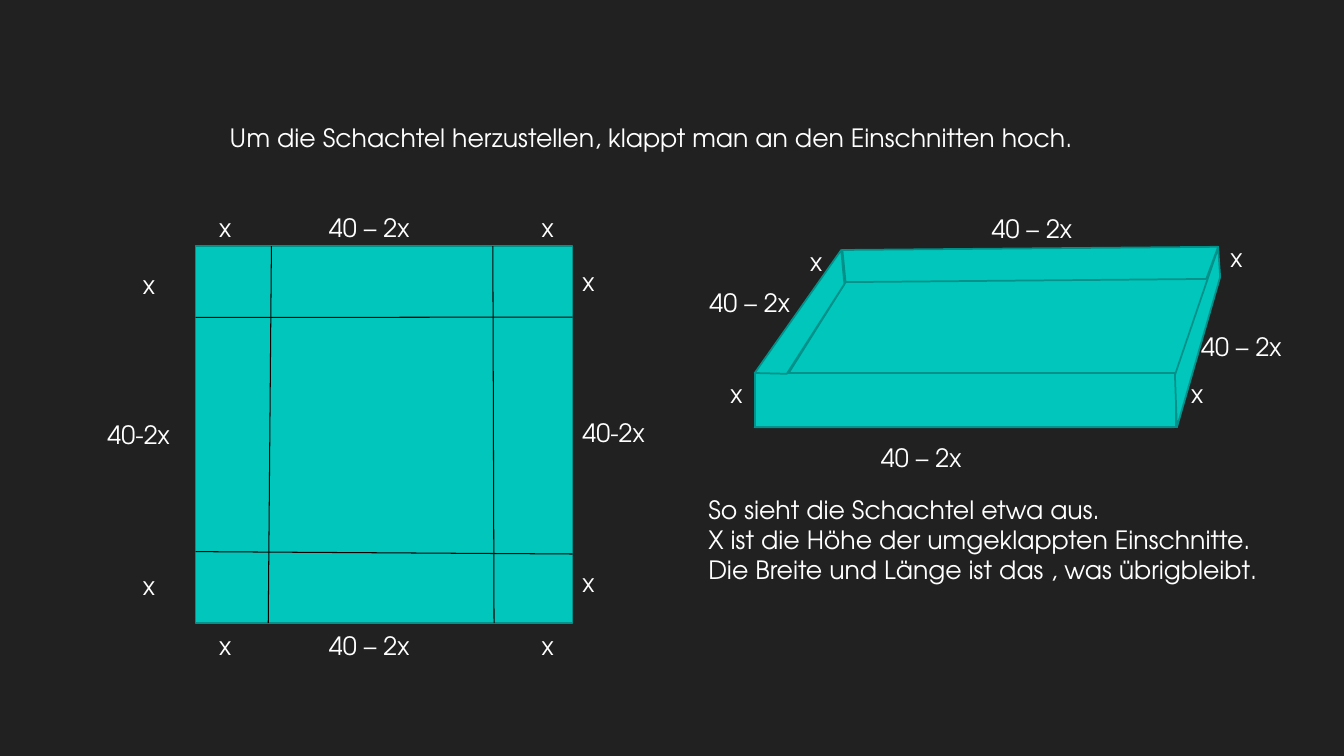
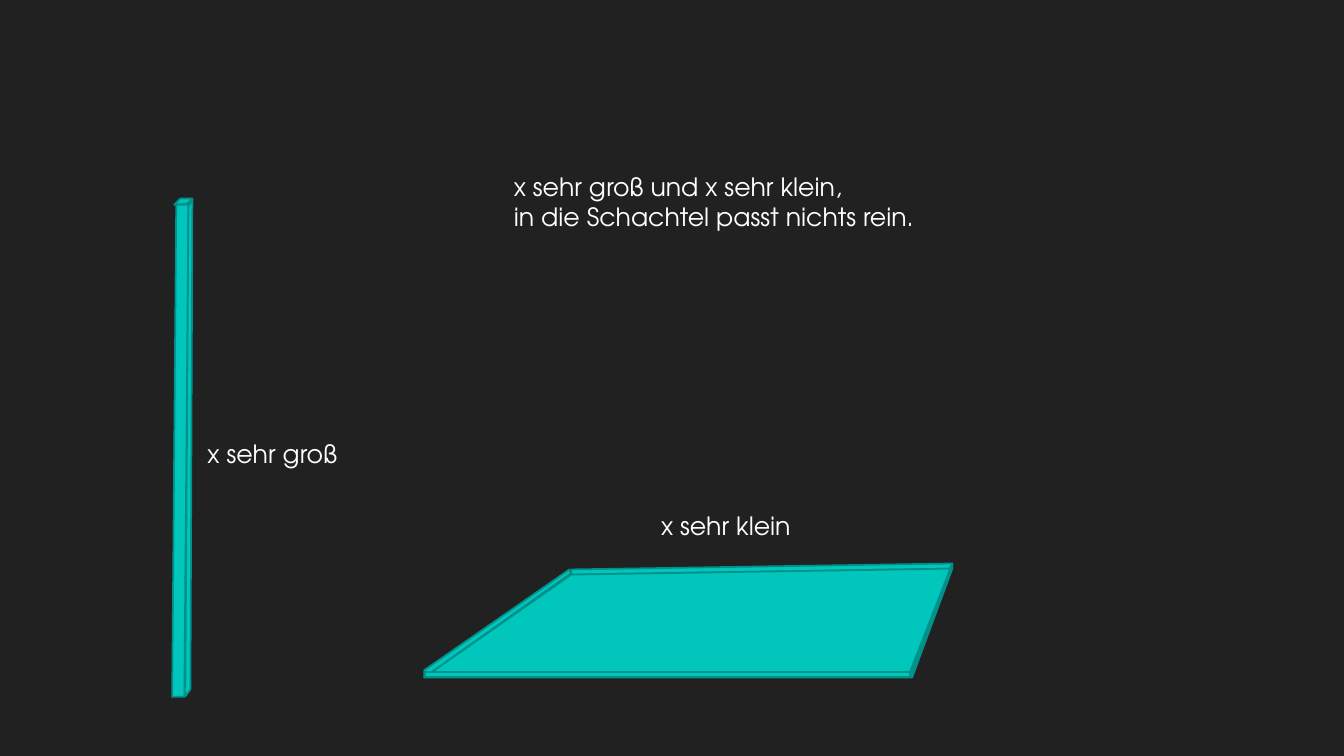
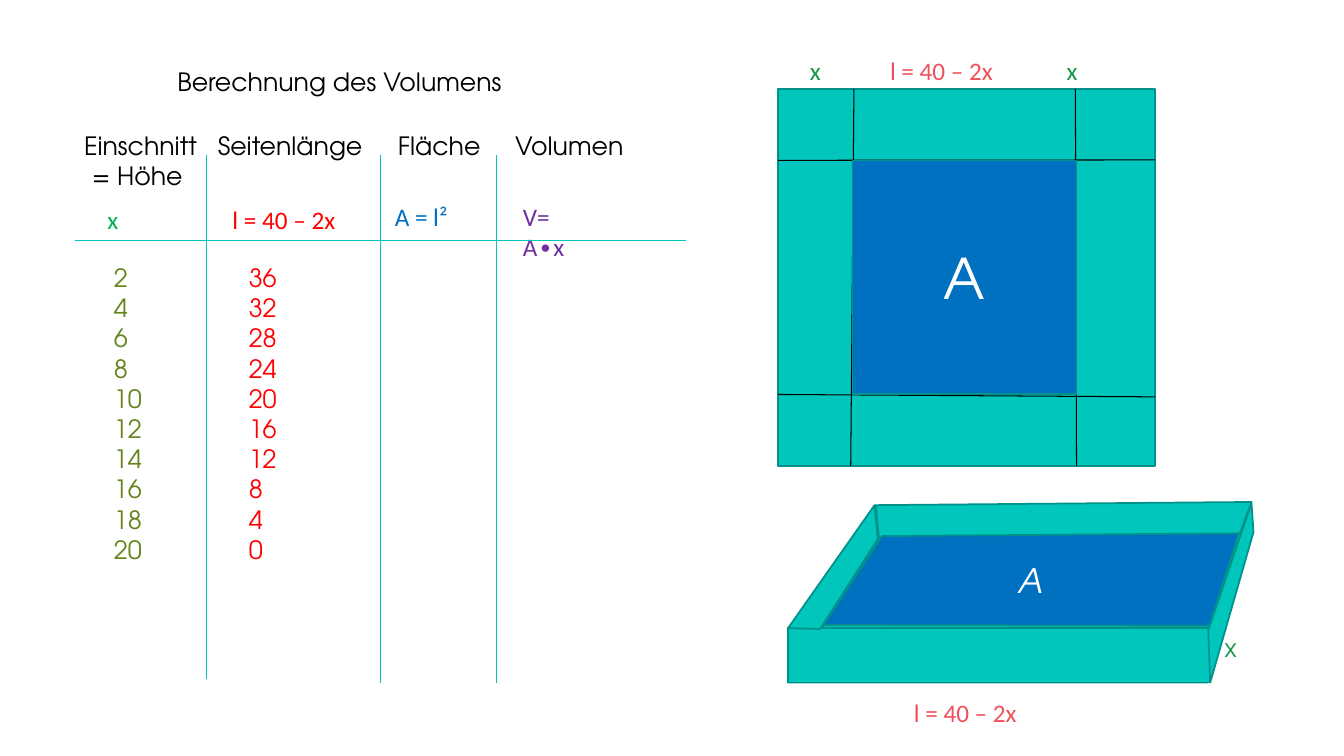
"""Builds three slides on the volume of a box folded from a square sheet."""
from lxml import etree
from pptx import Presentation
from pptx.dml.color import RGBColor
from pptx.enum.shapes import MSO_CONNECTOR as Connector, MSO_SHAPE as Preset
from pptx.enum.text import MSO_ANCHOR as Anchor, PP_ALIGN as Align
from pptx.oxml.ns import qn
from pptx.util import Cm, Pt

DARK = RGBColor(0x21, 0x21, 0x21)
WHITE = RGBColor(0xFF, 0xFF, 0xFF)
BLACK = RGBColor(0x00, 0x00, 0x00)
TEAL = RGBColor(0x00, 0xC6, 0xBB)
DEEP_TEAL = RGBColor(0x00, 0x92, 0x8A)
BLUE = RGBColor(0x00, 0x70, 0xC0)
RED = RGBColor(0xFF, 0x00, 0x00)
CORAL = RGBColor(0xED, 0x51, 0x5C)
GREEN = RGBColor(0x15, 0x98, 0x49)
BRIGHT_GREEN = RGBColor(0x00, 0xB0, 0x50)
OLIVE = RGBColor(0x63, 0x84, 0x1A)
PURPLE = RGBColor(0x70, 0x30, 0xA0)
MAIN_FONT = "TeX Gyre Adventor"
FORMULA_FONT = "Calibri"
LINE_PITCH = 0.76
SHEET_SIDE = 9.5


def add_page(deck, color):
    page = deck.slides.add_slide(deck.slide_layouts[6])
    fill = page.background.fill
    fill.solid()
    fill.fore_color.rgb = color
    return page


def write(frame, text, size=18, font=MAIN_FONT, color=WHITE, italic=False, align=Align.LEFT):
    for index, line in enumerate(text.split("\n")):
        para = frame.add_paragraph() if index else frame.paragraphs[0]
        para.alignment = align
        span = para.add_run()
        span.text = line
        span.font.size = Pt(size)
        span.font.name = font
        span.font.color.rgb = color
        span.font.italic = italic


def add_label(page, text, left, top, width=2.8, **style):
    height = 0.25 + LINE_PITCH * (text.count("\n") + 1)
    box = page.shapes.add_textbox(Cm(left), Cm(top), Cm(width), Cm(height))
    box.text_frame.word_wrap = True
    write(box.text_frame, text, **style)


def paint(shape, fill=TEAL, weight=1.25):
    shape.shadow.inherit = False
    shape.fill.solid()
    shape.fill.fore_color.rgb = fill
    shape.line.color.rgb = DEEP_TEAL
    shape.line.width = Pt(weight)
    return shape


def add_preset(page, left, top, width, height, preset=Preset.RECTANGLE, **look):
    shape = page.shapes.add_shape(preset, Cm(left), Cm(top), Cm(width), Cm(height))
    return paint(shape, **look)


def add_face(page, corners, left=0, top=0, **look):
    points = [(Cm(left + x), Cm(top + y)) for x, y in corners]
    builder = page.shapes.build_freeform(*points[0])
    builder.add_line_segments(points[1:], close=True)
    return paint(builder.convert_to_shape(), **look)


def add_line(page, x1, y1, x2, y2, color):
    line = page.shapes.add_connector(Connector.STRAIGHT, Cm(x1), Cm(y1), Cm(x2), Cm(y2))
    line.line.color.rgb = color
    line.line.width = Pt(0.75)
    etree.SubElement(line._element.spPr, qn("a:effectLst"))


def mark_area(shape, **style):
    shape.text_frame.vertical_anchor = Anchor.MIDDLE
    write(shape.text_frame, "A", align=Align.CENTER, **style)


def add_sheet(page, left, top):
    add_preset(page, left, top, SHEET_SIDE, SHEET_SIDE)
    cuts = [
        (1.91, 0, 1.83, SHEET_SIDE),
        (7.49, 0, 7.52, SHEET_SIDE),
        (0, 1.8, SHEET_SIDE, 1.79),
        (0, 7.7, SHEET_SIDE, 7.76),
    ]
    for x1, y1, x2, y2 in cuts:
        add_line(page, left + x1, top + y1, left + x2, top + y2, BLACK)


def add_open_box(page, left, top):
    floor = [(0, 4.55), (2.31, 0.86), (11.56, 0.76), (10.57, 4.55)]
    left_wall = [(0, 3.18), (2.18, 0.08), (2.26, 0.94), (0.81, 3.2)]
    right_wall = [(10.59, 3.23), (11.68, 0.03), (11.73, 0.76), (10.64, 4.55)]
    back_wall = [(2.21, 0.08), (11.68, 0), (11.38, 0.81), (2.29, 0.89)]
    add_face(page, floor, left, top)
    add_preset(page, left, top + 3.18, 10.62, 1.37)
    for wall in (left_wall, right_wall, back_wall):
        add_face(page, wall, left, top)


def build_folding(deck):
    page = add_page(deck, DARK)
    add_label(page, "Um die Schachtel herzustellen, klappt man an den Einschnitten hoch.",
              5.54, 2.95, 23)
    add_sheet(page, 4.93, 6.2)
    for top in (5.23, 15.77):
        for text, left in (("x", 5.27), ("40 – 2x", 8.04), ("x", 13.4)):
            add_label(page, text, left, top)
    for side_left, x_left, first_top in ((2.46, 3.35, 6.65), (14.43, 14.43, 6.58)):
        for row, text in enumerate(("x", "40-2x", "x")):
            left = x_left if text == "x" else side_left
            add_label(page, text, left, first_top + row * 5 * LINE_PITCH)

    add_open_box(page, 19.02, 6.22)
    for left, top in ((18.16, 9.42), (20.17, 6.07), (30.76, 5.97), (29.77, 9.4)):
        add_label(page, "x", left, top)
    for left, top in ((21.95, 11.02), (30.02, 8.23), (24.74, 5.26), (17.63, 7.11)):
        add_label(page, "40 – 2x", left, top)
    add_label(page, "So sieht die Schachtel etwa aus.\n"
                    "X ist die Höhe der umgeklappten Einschnitte.\n"
                    "Die Breite und Länge ist das , was übrigbleibt.", 17.6, 12.32, 15.5)


def build_extremes(deck):
    page = add_page(deck, DARK)
    tower_side = [(4.67, 17.55), (4.75, 5.21), (4.85, 5.03), (4.8, 17.37)]
    tower_top = [(4.39, 5.16), (4.55, 5), (4.85, 5), (4.72, 5.13)]
    add_preset(page, 4.34, 5.16, 0.41, 12.4, Preset.PARALLELOGRAM)
    add_face(page, tower_side)
    add_face(page, tower_top)

    tray_left = [(10.69, 16.89), (14.35, 14.35), (14.38, 14.45), (10.69, 17.07)]
    tray_back = [(14.4, 14.35), (24, 14.2), (23.93, 14.33), (14.4, 14.48)]
    tray_floor = [(10.69, 17.07), (14.4, 14.48), (24, 14.33), (22.99, 17.07)]
    tray_right = [(22.94, 16.92), (24, 14.2), (24, 14.3), (22.94, 17.07)]
    for face in (tray_left, tray_back, tray_floor):
        add_face(page, face)
    add_preset(page, 10.72, 16.94, 12.22, 0.13)
    add_face(page, tray_right)

    add_label(page, "x sehr groß", 4.98, 10.92, 4.2)
    add_label(page, "x sehr klein", 16.41, 12.73, 4.2)
    add_label(page, "x sehr groß und x sehr klein,\nin die Schachtel passt nichts rein.",
              12.7, 4.19, 11.5)


def build_volume(deck):
    page = add_page(deck, WHITE)
    add_label(page, "Berechnung des Volumens", 4.22, 1.55, 10, color=BLACK)
    headings = [("Einschnitt", 1.87, 3.15), ("= Höhe", 2.07, 3.15 + LINE_PITCH),
                ("Seitenlänge", 5.24, 3.15), ("Fläche", 9.78, 3.15), ("Volumen", 12.73, 3.15)]
    for text, left, top in headings:
        add_label(page, text, left, top, 4.5, color=BLACK)

    formulas = [("x", 2.46, 5.03, 2, BRIGHT_GREEN), ("l = 40 – 2x", 5.61, 5.03, 3.5, RED),
                ("A = l²", 9.7, 4.95, 2.5, BLUE), ("V= A∙x", 12.93, 4.95, 2, PURPLE)]
    for text, left, top, width, color in formulas:
        add_label(page, text, left, top, width, font=FORMULA_FONT, color=color)

    add_line(page, 1.88, 6.07, 17.3, 6.07, TEAL)
    for x, bottom in ((5.21, 17.12), (9.58, 17.22), (12.52, 17.22)):
        add_line(page, x, 3.9, x, bottom, TEAL)
    cuts = range(2, 21, 2)
    add_label(page, "\n".join(str(cut) for cut in cuts), 2.62, 6.48, color=OLIVE)
    add_label(page, "\n".join(str(40 - 2 * cut) for cut in cuts), 6.02, 6.48, color=RED)

    add_sheet(page, 19.61, 2.24)
    for text, left, color in (("x", 20.16, GREEN), ("l = 40 – 2x", 22.18, CORAL),
                              ("x", 26.63, GREEN)):
        add_label(page, text, left, 1.27, 3.5, font=FORMULA_FONT, color=color)
    base = add_preset(page, 21.49, 4.04, 5.64, 5.89, fill=BLUE, weight=0.75)
    mark_area(base, size=40)

    add_open_box(page, 19.86, 12.65)
    add_label(page, "x", 30.61, 15.82, color=GREEN)
    add_label(page, "l = 40 – 2x", 22.78, 17.45, 3.5, font=FORMULA_FONT, color=CORAL)
    floor = [(20.75, 15.75), (22.23, 13.51), (31.22, 13.44), (30.48, 15.77)]
    mark_area(add_face(page, floor, fill=BLUE), size=24, italic=True)


def main():
    deck = Presentation()
    deck.slide_width = Cm(33.87)
    deck.slide_height = Cm(19.05)
    build_folding(deck)
    build_extremes(deck)
    build_volume(deck)
    deck.save("out.pptx")


if __name__ == "__main__":
    main()
